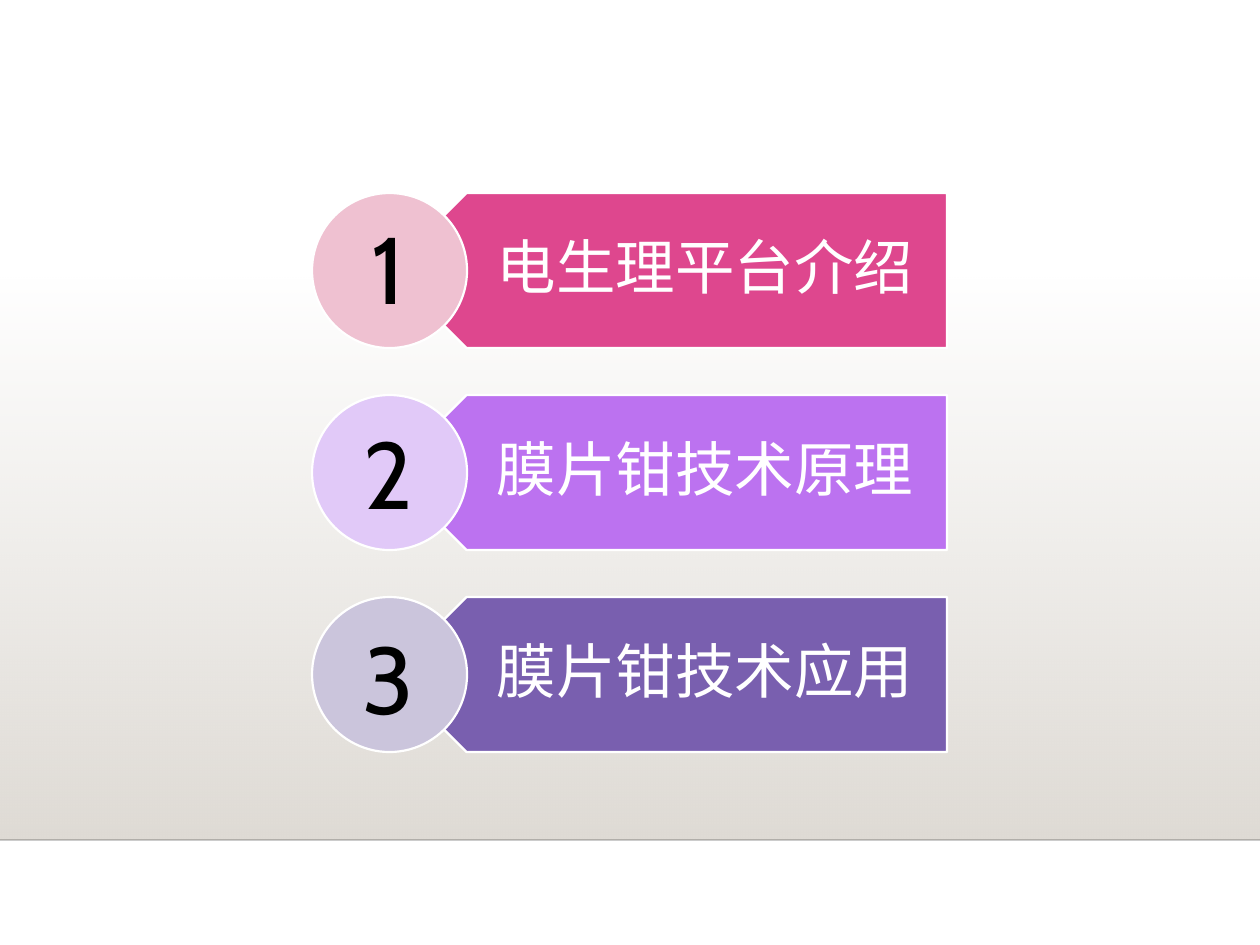
from lxml import etree
from pptx import Presentation
from pptx import util as u
from pptx.dml.color import RGBColor
from pptx.enum import shapes, text
from pptx.oxml.ns import qn

PX = 914400 / 126
ROWS = [
    ("电生理平台介绍", "DE478E", "EFC1D1"),
    ("膜片钳技术原理", "BC72F0", "E1C9F8"),
    ("膜片钳技术应用", "795FAF", "CBC5DC"),
]
TOP, PITCH, SIZE = 193, 202, 155
NUMBER_TOP, NUMBER_PITCH = 204, 205


def px(n):
    return u.Emu(round(n * PX))


def color(value):
    return RGBColor.from_string(value)


def add_alpha(fill_element, percent):
    rgb = next(fill_element.iter(qn("a:srgbClr")))
    etree.SubElement(rgb, qn("a:alpha")).set("val", str(percent * 1000))


def add_backdrop(s):
    sp = s.shapes.add_shape(shapes.MSO_SHAPE.RECTANGLE, 0, px(277), px(1260), px(563))
    sp.shadow.inherit = False
    sp.line.fill.background()
    sp.fill.gradient()
    sp.fill.gradient_angle = 270
    for stop, position in zip(sp.fill.gradient_stops, (0, 1)):
        stop.position = position
        stop.color.rgb = color("DFDBD5")
    add_alpha(next(sp._element.iter(qn("a:gs"))), 0)


def add_floor_line(s):
    line = s.shapes.add_connector(shapes.MSO_CONNECTOR.STRAIGHT, 0, px(840), px(1260), px(840))
    line.line.color.rgb = color("000001")
    line.line.width = u.Pt(1)
    sp_pr = line._element.spPr
    add_alpha(sp_pr, 20)
    etree.SubElement(sp_pr, qn("a:effectLst"))


def add_shape(s, kind, left, top, width, height, fill):
    sp = s.shapes.add_shape(kind, px(left), px(top), px(width), px(height))
    sp.shadow.inherit = False
    sp.fill.solid()
    sp.fill.fore_color.rgb = color(fill)
    sp.line.color.rgb = color("FFFFFF")
    sp.line.width = u.Pt(1.25)
    return sp


def add_text(s, left, top, width, height, content, font, size, fill):
    tf = s.shapes.add_textbox(px(left), px(top), px(width), px(height)).text_frame
    tf.word_wrap = True
    tf.text = content
    p = tf.paragraphs[0]
    p.alignment = text.PP_ALIGN.CENTER
    r = p.runs[0]
    r.font.size = u.Pt(size)
    r.font.name = font
    r.font.color.rgb = color(fill)
    etree.SubElement(r._r.get_or_add_rPr(), qn("a:ea")).set("typeface", font)
    return tf


def add_label(s, top, content):
    tf = add_text(s, 428, top, 519, SIZE, content, "Noto Sans CJK SC", 34, "FFFFFF")
    tf.vertical_anchor = text.MSO_ANCHOR.MIDDLE
    tf.margin_left, tf.margin_right = px(68), px(33)
    tf.margin_top = tf.margin_bottom = px(18)
    tf.paragraphs[0].line_spacing = 0.9
    tf.paragraphs[0].space_after = u.Pt(12)


def add_row(s, top, label, bar_fill, circle_fill):
    bar = add_shape(s, shapes.MSO_SHAPE.PENTAGON, 389, top, 558, SIZE, bar_fill)
    bar.rotation = 180
    add_label(s, top, label)
    add_shape(s, shapes.MSO_SHAPE.OVAL, 312, top, SIZE, SIZE, circle_fill)


def main():
    prs = Presentation()
    prs.slide_width, prs.slide_height = px(1260), px(945)
    s = prs.slides.add_slide(prs.slide_layouts[6])
    add_backdrop(s)
    add_floor_line(s)
    for i, row in enumerate(ROWS):
        add_row(s, TOP + i * PITCH, *row)
    for i in range(len(ROWS)):
        add_text(s, 319, NUMBER_TOP + i * NUMBER_PITCH, 139, 127, str(i + 1), "Cabin", 54, "000000")
    prs.save("out.pptx")


if __name__ == "__main__":
    main()
